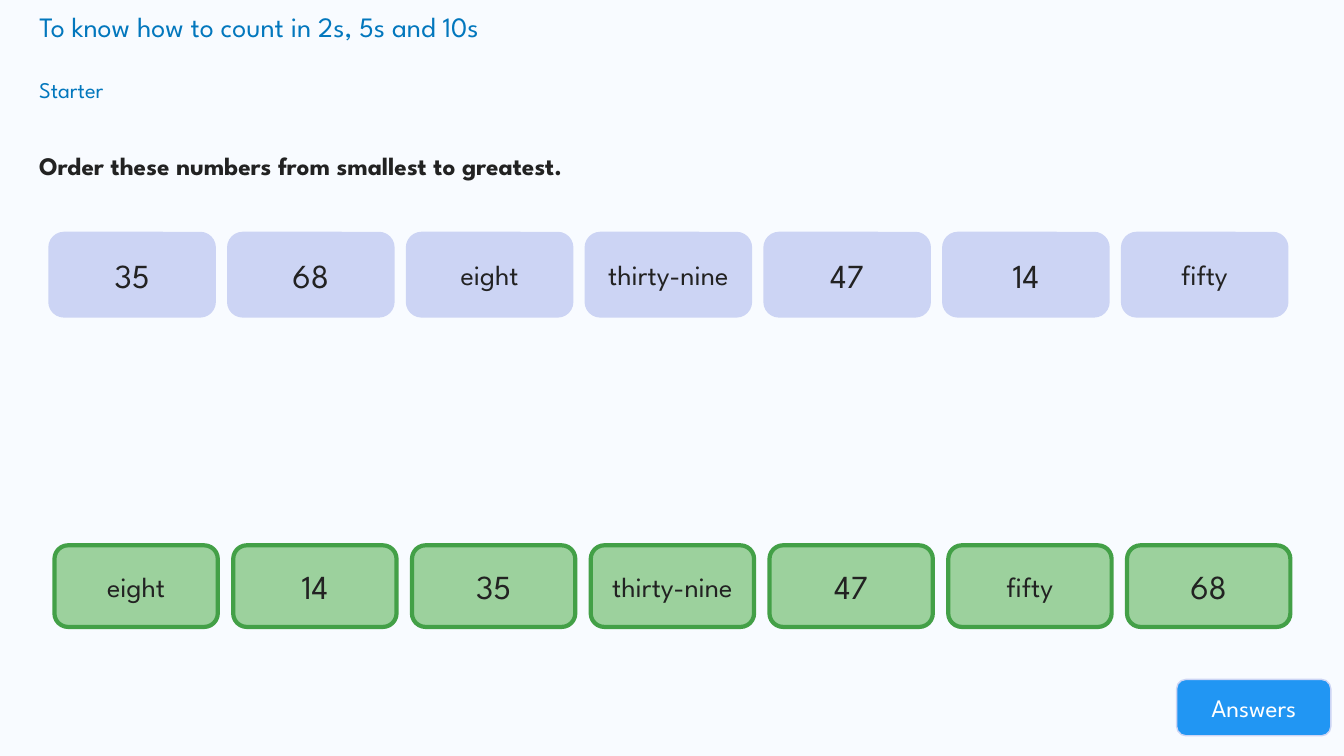
from pptx import Presentation
from pptx.dml.color import RGBColor
from pptx.enum.shapes import MSO_SHAPE
from pptx.enum.text import MSO_ANCHOR, PP_ALIGN
from pptx.util import Inches, Pt

FONT = "League Spartan"
COLORS = {
    "background": "F8FBFF",
    "heading": "0277BD",
    "ink": "222222",
    "white": "FFFFFF",
    "question": "CCD4F4",
    "answer": "9CD19D",
    "answer_edge": "43A047",
    "button": "2196F3",
}

OBJECTIVE = "To know how to count in 2s, 5s and 10s"
SECTION = "Starter"
INSTRUCTION = "Order these numbers from smallest to greatest."
BUTTON = "Answers"
QUESTIONS = ["35", "68", "eight", "thirty-nine", "47", "14", "fifty"]
ANSWERS = ["eight", "14", "35", "thirty-nine", "47", "fifty", "68"]

MARGIN = 0.29
CARD_WIDTH, CARD_HEIGHT, CARD_PITCH = 1.62, 0.81, 1.773


def color(name):
    return RGBColor.from_string(COLORS[name])


def write(frame, text, size, ink, bold=False, align=PP_ALIGN.LEFT,
          anchor=MSO_ANCHOR.TOP):
    frame.word_wrap = True
    frame.vertical_anchor = anchor
    frame.text = text
    paragraph = frame.paragraphs[0]
    paragraph.alignment = align
    paragraph.font.name = FONT
    paragraph.font.size = Pt(size)
    paragraph.font.bold = bold
    paragraph.font.color.rgb = color(ink)
    return paragraph


def add_heading(slide, box, *style, **options):
    heading = slide.shapes.add_textbox(*map(Inches, box))
    return write(heading.text_frame, *style, **options)


def add_card(shapes, box, text, size, fill, edge, edge_width, ink="ink"):
    card = shapes.add_shape(MSO_SHAPE.ROUNDED_RECTANGLE, *map(Inches, box))
    card.shadow.inherit = False
    card.fill.solid()
    card.fill.fore_color.rgb = color(fill)
    card.line.color.rgb = color(edge)
    card.line.width = Pt(edge_width)
    write(card.text_frame, text, size, ink, align=PP_ALIGN.CENTER,
          anchor=MSO_ANCHOR.MIDDLE)


def add_row(shapes, numbers, left, top, fill, edge):
    for column, number in enumerate(numbers):
        box = (left + column * CARD_PITCH, top, CARD_WIDTH, CARD_HEIGHT)
        size = 24 if number.isdigit() else 20
        add_card(shapes, box, number, size, fill, edge, 3)


def main():
    deck = Presentation()
    deck.slide_width, deck.slide_height = Inches(13.33), Inches(7.5)
    slide = deck.slides.add_slide(deck.slide_layouts[5])
    slide.background.fill.solid()
    slide.background.fill.fore_color.rgb = color("background")

    objective = slide.shapes.title
    objective.left, objective.top = Inches(MARGIN), Inches(0.04)
    objective.width, objective.height = Inches(12.34), Inches(0.44)
    write(objective.text_frame, OBJECTIVE, 20, "heading")

    add_heading(slide, (MARGIN, 0.71, 2.97, 0.46), SECTION, 16, "heading")
    instruction = add_heading(slide, (MARGIN, 1.29, 12.84, 0.56),
                              INSTRUCTION, 18, "ink", bold=True)
    instruction.line_spacing = 1.5

    add_card(slide.shapes, (11.67, 6.74, 1.53, 0.56), BUTTON, 18,
             "button", "question", 1, "white")
    add_row(slide.shapes, QUESTIONS, 0.5, 2.32, "question", "question")
    answers = slide.shapes.add_group_shape()
    add_row(answers.shapes, ANSWERS, 0.54, 5.41, "answer", "answer_edge")

    deck.save("out.pptx")


if __name__ == "__main__":
    main()
